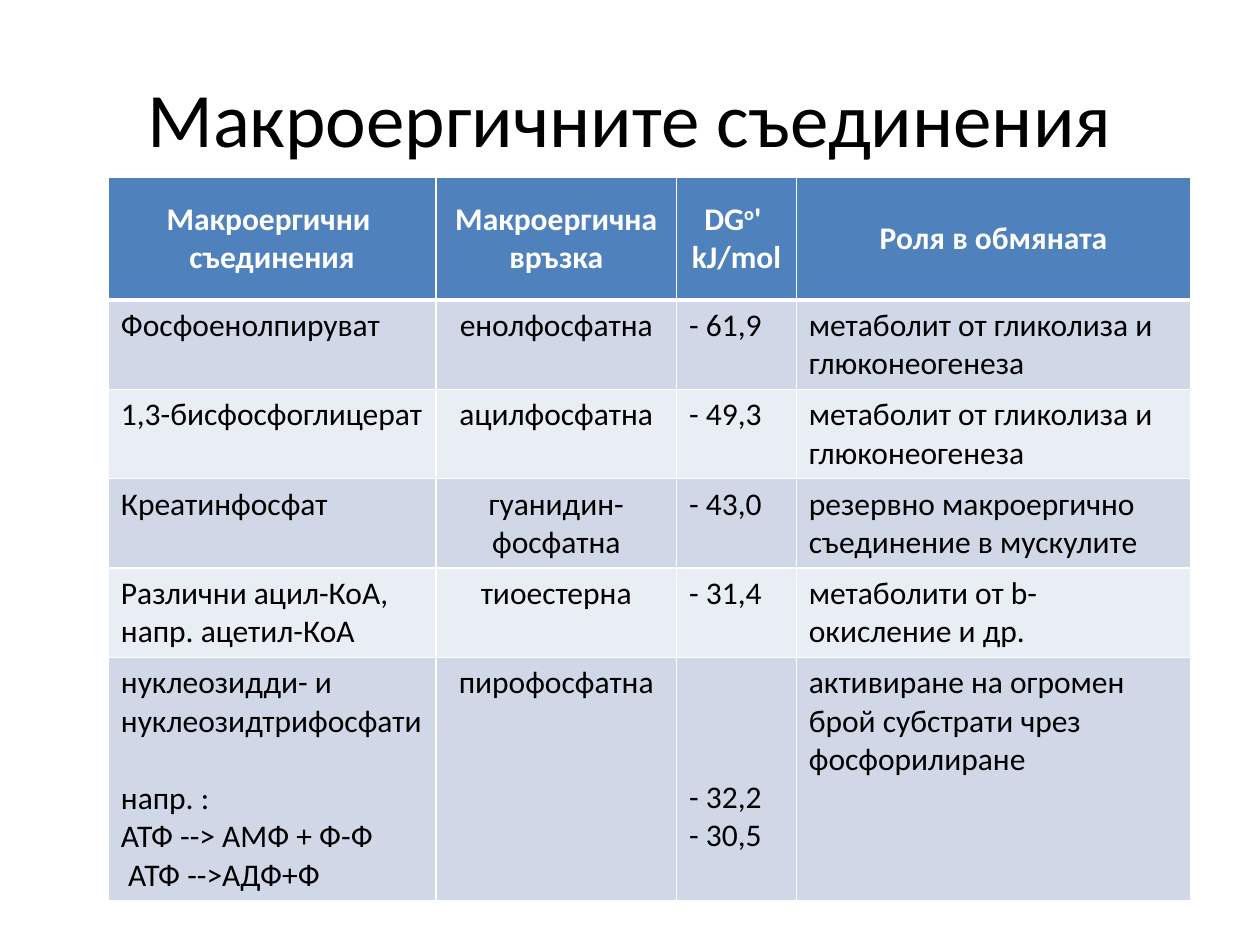
import dataclasses

import lxml.etree
import pptx
import pptx.dml.color
import pptx.enum.text
import pptx.oxml.ns
import pptx.util

Inches = pptx.util.Inches
Align = pptx.enum.text.PP_ALIGN
Anchor = pptx.enum.text.MSO_ANCHOR


@dataclasses.dataclass(frozen=True)
class Theme:
    font: str = "Calibri"
    title_size: int = 44
    table_size: int = 18
    blank_line: int = 22
    text: str = "000000"
    light: str = "FFFFFF"
    header: str = "4F81BD"
    bands: tuple = ("D0D8E8", "E9EDF4")
    rule: int = 1
    header_rule: int = 3


COLUMN_WIDTHS = (2.6, 1.91, 0.95, 3.13)
COLUMN_ALIGNMENTS = (Align.LEFT, Align.CENTER, Align.LEFT, Align.LEFT)
ROW_HEIGHTS = (0.97, 0.71, 0.71, 0.71, 0.71, 1.93)
HEADERS = (
    "Макроергични \nсъединения",
    "Макроергична връзка",
    "DG^o^' \nkJ/mol",
    "Роля в обмяната",
)
COMPOUNDS = (
    ("Фосфоенолпируват", "енолфосфатна", "- 61,9",
     "метаболит от гликолиза и глюконеогенеза"),
    ("1,3-бисфосфоглицерат", "ацилфосфатна", "- 49,3",
     "метаболит от гликолиза и глюконеогенеза"),
    ("Креатинфосфат", "гуанидин-фосфатна", "- 43,0",
     "резервно макроергично съединение в мускулите"),
    ("Различни ацил-КоА, \nнапр. ацетил-КоА", "тиоестерна", "- 31,4",
     "метаболити от b-окисление и др."),
    ("нуклеозидди- и нуклеозидтрифосфати", "пирофосфатна", "- 32,2\n- 30,5",
     "активиране на огромен брой субстрати чрез фосфорилиране"),
)
EXAMPLE = "напр. :\nАТФ --> АМФ + Ф-Ф \n АТФ -->АДФ+Ф"


class SlideBuilder:
    """Hold the theme and the current slide, and add styled elements to it."""

    def __init__(self, slide, theme):
        self.slide = slide
        self.theme = theme

    def fill_paragraph(self, paragraph, text, size, color, alignment, bold=False):
        paragraph.alignment = alignment
        font_format = {"name": self.theme.font, "size": pptx.util.Pt(size), "bold": bold}
        for line_number, line in enumerate(text.split("\n")):
            if line_number:
                paragraph.add_line_break()
            for piece_number, piece in enumerate(line.split("^")):
                run = paragraph.add_run()
                run.text = piece
                for name, value in font_format.items():
                    setattr(run.font, name, value)
                run.font.color.rgb = pptx.dml.color.RGBColor.from_string(color)
                if piece_number % 2:
                    run.font._element.set("baseline", "30000")

    def title(self, text, left, top, width, height):
        shape = self.slide.shapes.add_textbox(
            Inches(left), Inches(top), Inches(width), Inches(height))
        frame_format = {"word_wrap": True, "vertical_anchor": Anchor.MIDDLE}
        for name, value in frame_format.items():
            setattr(shape.text_frame, name, value)
        self.fill_paragraph(shape.text_frame.paragraphs[0], text, self.theme.title_size,
                            self.theme.text, Align.CENTER)

    def borders(self, cell, top, bottom):
        properties = cell._tc.get_or_add_tcPr()
        widths = {"L": self.theme.rule, "R": self.theme.rule, "T": top, "B": bottom}
        for side, width in widths.items():
            line = lxml.etree.SubElement(
                properties, pptx.oxml.ns.qn(f"a:ln{side}"), w=str(pptx.util.Pt(width)))
            fill = lxml.etree.SubElement(line, pptx.oxml.ns.qn("a:solidFill"))
            lxml.etree.SubElement(fill, pptx.oxml.ns.qn("a:srgbClr"), val=self.theme.light)

    def table(self, rows, left, top, widths, heights):
        theme = self.theme
        table = self.slide.shapes.add_table(
            len(rows), len(widths), Inches(left), Inches(top),
            Inches(sum(widths)), Inches(sum(heights))).table
        for column, width in zip(table.columns, widths):
            column.width = Inches(width)
        for row_number, (texts, height) in enumerate(zip(rows, heights)):
            table.rows[row_number].height = Inches(height)
            header = row_number == 0
            fill = theme.header if header else theme.bands[(row_number - 1) % 2]
            color = theme.light if header else theme.text
            for column_number, text in enumerate(texts):
                cell = table.cell(row_number, column_number)
                self.borders(cell,
                             theme.header_rule if row_number == 1 else theme.rule,
                             theme.header_rule if header else theme.rule)
                cell.fill.solid()
                cell.fill.fore_color.rgb = pptx.dml.color.RGBColor.from_string(fill)
                cell.vertical_anchor = Anchor.MIDDLE if header else Anchor.TOP
                alignment = Align.CENTER if header else COLUMN_ALIGNMENTS[column_number]
                self.fill_paragraph(cell.text_frame.paragraphs[0], text, theme.table_size,
                                    color, alignment, header)
        return table

    def example(self, cell, text):
        paragraph = cell.text_frame.add_paragraph()
        paragraph.space_before = pptx.util.Pt(self.theme.blank_line)
        self.fill_paragraph(paragraph, text, self.theme.table_size, self.theme.text,
                            Align.LEFT)

    def raise_from_bottom(self, cell, margin):
        cell_format = {"vertical_anchor": Anchor.BOTTOM, "margin_bottom": Inches(margin)}
        for name, value in cell_format.items():
            setattr(cell, name, value)


def main():
    presentation = pptx.Presentation()
    presentation.slide_width = Inches(10)
    presentation.slide_height = Inches(7.5)
    slide = presentation.slides.add_slide(presentation.slide_layouts[6])
    builder = SlideBuilder(slide, Theme())
    builder.title("Макроергичните съединения", 0.5, 0.3, 9, 1.25)
    table = builder.table((HEADERS, *COMPOUNDS), 0.86, 1.41, COLUMN_WIDTHS, ROW_HEIGHTS)
    last_row = len(COMPOUNDS)
    builder.example(table.cell(last_row, 0), EXAMPLE)
    builder.raise_from_bottom(table.cell(last_row, 2), 0.36)
    presentation.save("out.pptx")


if __name__ == "__main__":
    main()
